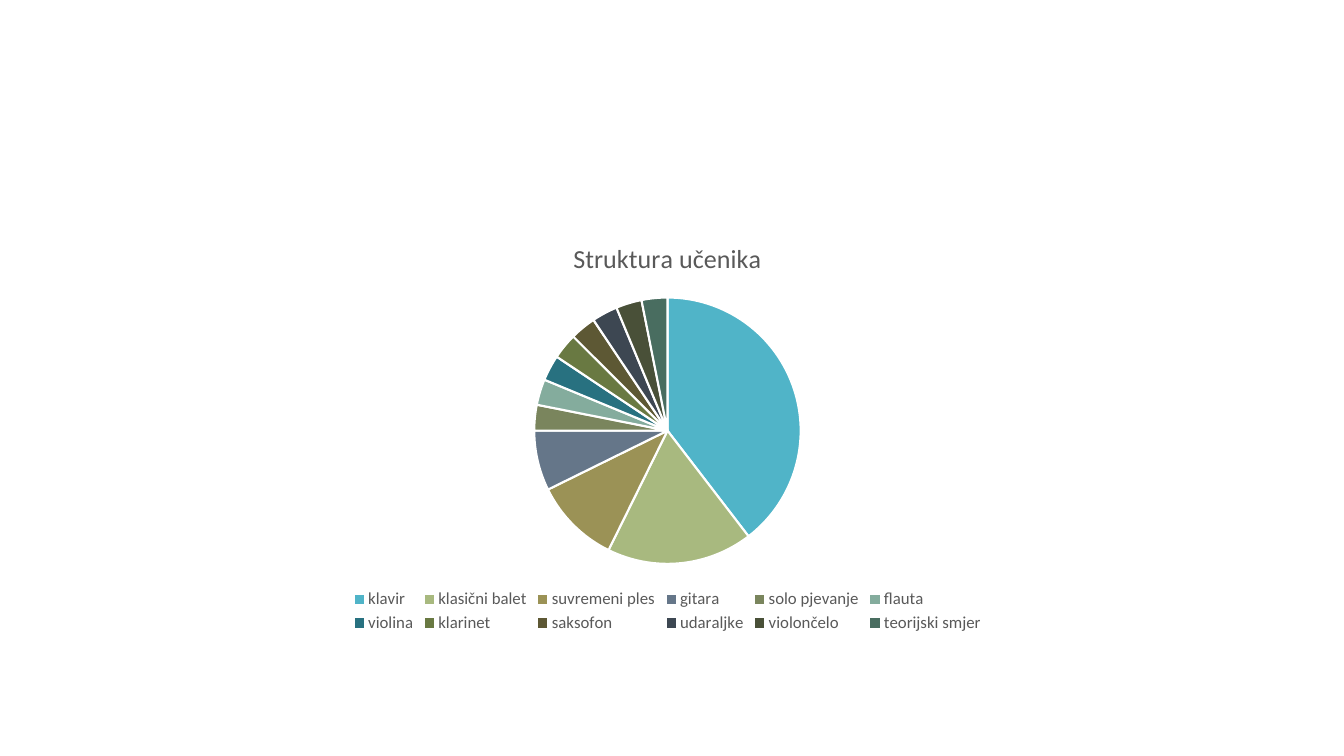
"""Build a slide with a pie chart of students by programme."""
from dataclasses import dataclass

from pptx import Presentation
from pptx.chart.data import CategoryChartData
from pptx.dml.color import RGBColor
from pptx.enum.chart import XL_CHART_TYPE, XL_LEGEND_POSITION
from pptx.util import Inches, Pt

PIE = XL_CHART_TYPE.PIE
BOTTOM = XL_LEGEND_POSITION.BOTTOM

TITLE = "Struktura učenika"
PROGRAMMES = [
    ("klavir", 38, "50B4C8"),
    ("klasični balet", 17, "A8B97F"),
    ("suvremeni ples", 10, "9B9256"),
    ("gitara", 7, "657689"),
    ("solo pjevanje", 3, "7A855D"),
    ("flauta", 3, "84AC9D"),
    ("violina", 3, "287180"),
    ("klarinet", 3, "697942"),
    ("saksofon", 3, "5D5834"),
    ("udaraljke", 3, "3D4752"),
    ("violončelo", 3, "495038"),
    ("teorijski smjer", 3, "496D60"),
]

SLIDE_WIDTH, SLIDE_HEIGHT = 13.33, 7.5
CHART_BOX = (0.74, 2.2, 11.76, 4.12)


@dataclass(frozen=True)
class Theme:
    """Colours, font and type sizes of the slide."""
    font: str = "Calibri"
    text: str = "595959"
    border: str = "FFFFFF"
    border_width: float = 1.5
    base_size: float = 10
    title_size: float = 18.6
    legend_size: float = 12


THEME = Theme()


def format_font(font, size, color=THEME.text):
    """Apply the theme font with a size and colour."""
    font.name = THEME.font
    font.size = Pt(size)
    font.bold = False
    font.color.rgb = RGBColor.from_string(color)


def set_text(text_frame, text, **font_format):
    """Write text into a frame and format it."""
    text_frame.text = text
    format_font(text_frame.paragraphs[0].runs[0].font, **font_format)


def add_programme_chart(slide):
    """Add the pie chart with its title and legend."""
    data = CategoryChartData()
    data.categories = [name for name, _, _ in PROGRAMMES]
    data.add_series(TITLE, [share for _, share, _ in PROGRAMMES])
    box = [Inches(length) for length in CHART_BOX]
    chart = slide.shapes.add_chart(PIE, *box, data).chart

    format_font(chart.font, THEME.base_size)
    chart.has_title = True
    set_text(chart.chart_title.text_frame, TITLE, size=THEME.title_size)
    chart.chart_title.include_in_layout = False
    chart.has_legend = True
    chart.legend.position = BOTTOM
    chart.legend.include_in_layout = False
    format_font(chart.legend.font, THEME.legend_size)

    plot = chart.plots[0]
    plot.vary_by_categories = True
    for index, (_, _, color) in enumerate(PROGRAMMES):
        slice_format = plot.series[0].points[index].format
        slice_format.fill.solid()
        slice_format.fill.fore_color.rgb = RGBColor.from_string(color)
        slice_format.line.color.rgb = RGBColor.from_string(THEME.border)
        slice_format.line.width = Pt(THEME.border_width)


def main():
    """Create and save the presentation."""
    presentation = Presentation()
    presentation.slide_width = Inches(SLIDE_WIDTH)
    presentation.slide_height = Inches(SLIDE_HEIGHT)
    slide = presentation.slides.add_slide(presentation.slide_layouts.get_by_name("Blank"))
    add_programme_chart(slide)
    presentation.save("out.pptx")


if __name__ == "__main__":
    main()
